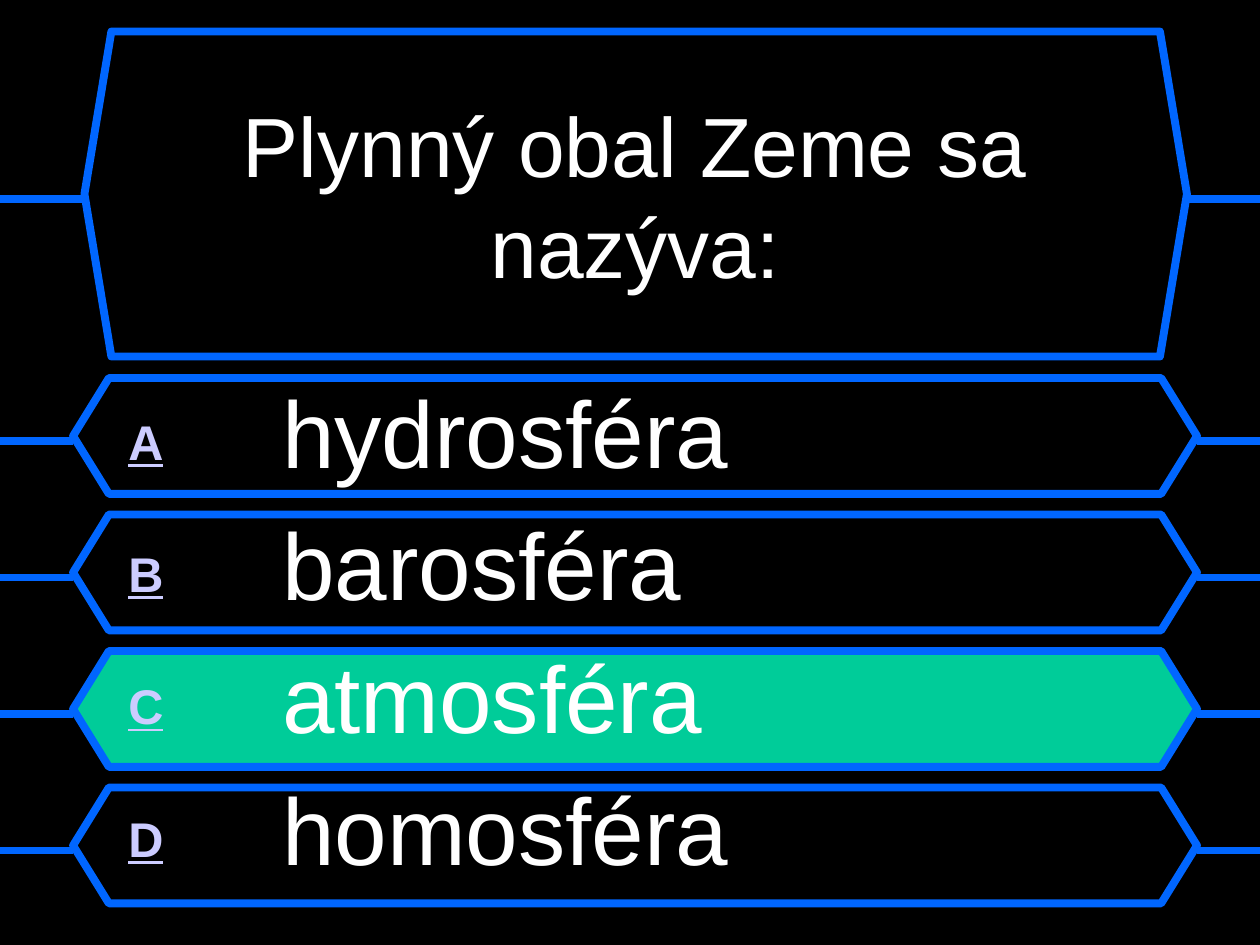
from lxml import etree
from pptx import Presentation
from pptx import util as u
from pptx.dml.color import RGBColor
from pptx.enum import shapes, text
from pptx.oxml import ns

BLACK, WHITE, BLUE, GREEN, LAVENDER = "000000", "FFFFFF", "0066FF", "00CC99", "CCCCFF"
ANSWERS = ["hydrosféra", "barosféra", "atmosféra", "homosféra"]
CORRECT = "atmosféra"
SLIDE_WIDTH = 10
ANSWER_TOP, ANSWER_PITCH = 3, 3.25 / 3


def color(value):
    return RGBColor.from_string(value)


class QuizSlide:
    font = "Arial"
    line_width = 4.5

    def __init__(self, presentation):
        self.slide = presentation.slides.add_slide(presentation.slide_layouts[6])
        background = self.slide.background.fill
        background.solid()
        background.fore_color.rgb = color(BLACK)

    def style_line(self, line):
        line.color.rgb = color(BLUE)
        line.width = u.Pt(self.line_width)

    def hexagon(self, left, top, width, height, slant, fill=BLACK):
        shape = self.slide.shapes.add_shape(
            shapes.MSO_SHAPE.HEXAGON,
            u.Inches(left), u.Inches(top), u.Inches(width), u.Inches(height))
        shape.adjustments[0] = slant
        shape.shadow.inherit = False
        shape.fill.solid()
        shape.fill.fore_color.rgb = color(fill)
        self.style_line(shape.line)

    def line(self, start, end, y):
        connector = self.slide.shapes.add_connector(
            shapes.MSO_CONNECTOR.STRAIGHT,
            u.Inches(start), u.Inches(y), u.Inches(end), u.Inches(y))
        self.style_line(connector.line)
        etree.SubElement(connector._element.spPr, ns.qn("a:effectLst"))

    def side_lines(self, left, right, y):
        self.line(left, 0, y)
        self.line(SLIDE_WIDTH, right, y)

    def text_frame(self, left, top, width, height, anchor):
        box = self.slide.shapes.add_textbox(
            u.Inches(left), u.Inches(top), u.Inches(width), u.Inches(height))
        frame = box.text_frame
        frame.word_wrap = True
        frame.vertical_anchor = anchor
        return frame

    def run(self, paragraph, words, size, fill=WHITE):
        run = paragraph.add_run()
        run.text = words
        run.font.name = self.font
        run.font.size = u.Pt(size)
        run.font.color.rgb = color(fill)
        return run

    def answer(self, paragraph, letter, word):
        properties = paragraph._p.get_or_add_pPr()
        spacing = etree.SubElement(properties, ns.qn("a:spcBef"))
        etree.SubElement(spacing, ns.qn("a:spcPct"), val="20000")
        tabs = etree.SubElement(properties, ns.qn("a:tabLst"))
        etree.SubElement(tabs, ns.qn("a:tab"), pos=str(u.Inches(1.22)), algn="l")
        label = self.run(paragraph, letter, 48, LAVENDER)
        label.font.bold = True
        label.font.underline = True
        label.font._element.set("baseline", "10000")
        self.run(paragraph, "\t", 54)
        self.run(paragraph, word, 54)


def main():
    presentation = Presentation()
    presentation.slide_width = u.Inches(SLIDE_WIDTH)
    presentation.slide_height = u.Inches(7.5)
    quiz = QuizSlide(presentation)

    quiz.hexagon(0.67, 0.25, 8.75, 2.58, 0.083)
    quiz.side_lines(0.67, 9.42, 1.58)
    for index, word in enumerate(ANSWERS):
        top = ANSWER_TOP + index * ANSWER_PITCH
        quiz.hexagon(0.58, top, 8.92, 0.92, 0.309, GREEN if word == CORRECT else BLACK)
        quiz.side_lines(0.58, 9.5, top + 0.5)

    question = quiz.text_frame(0.83, 0.42, 8.42, 2.25, text.MSO_ANCHOR.MIDDLE).paragraphs[0]
    question.alignment = text.PP_ALIGN.CENTER
    quiz.run(question, "Plynný obal Zeme sa nazýva:", 48)

    answers = quiz.text_frame(0.92, 2.92, 8.33, 4.33, text.MSO_ANCHOR.TOP)
    for index, (letter, word) in enumerate(zip("ABCD", ANSWERS)):
        paragraph = answers.add_paragraph() if index else answers.paragraphs[0]
        quiz.answer(paragraph, letter, word)

    presentation.save("out.pptx")


if __name__ == "__main__":
    main()
